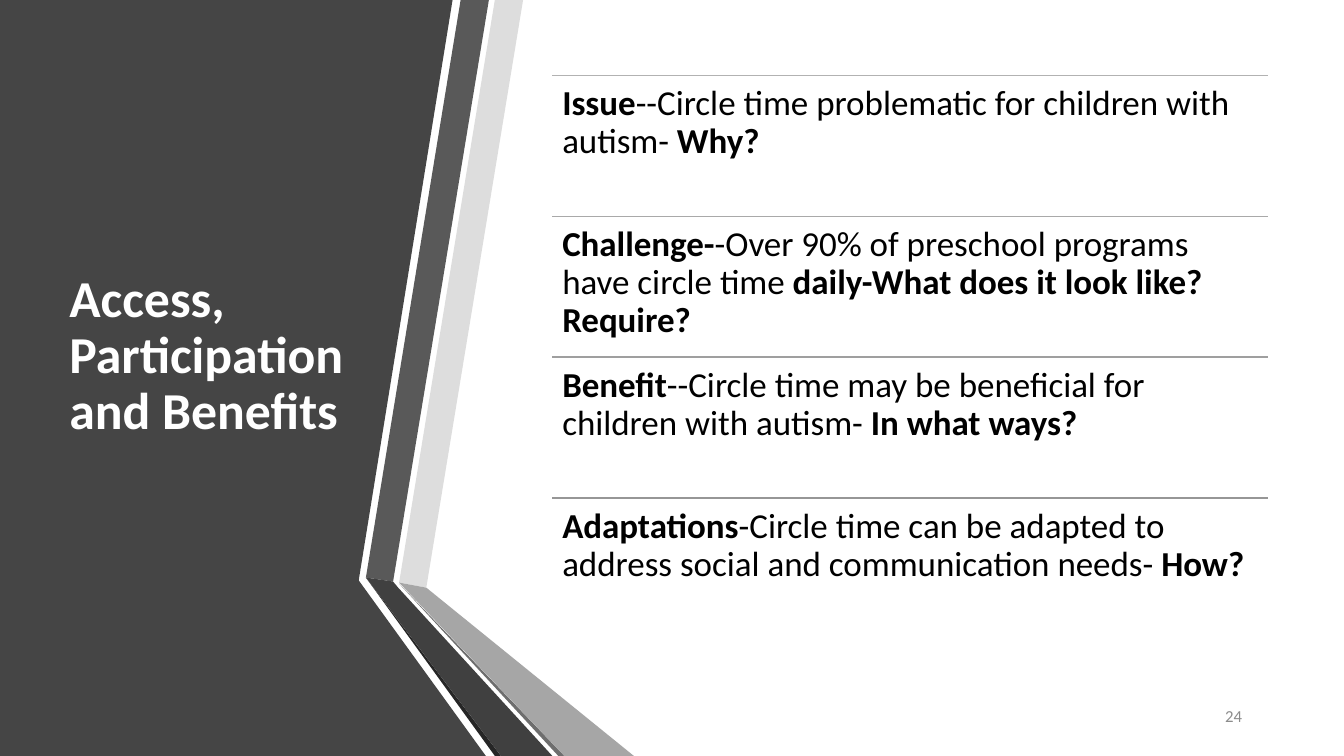
import lxml.etree
import pptx
import pptx.dml.color
import pptx.enum.shapes
import pptx.enum.text
import pptx.oxml.ns
import pptx.util

COLORS = {
    "panel": "454545", "light": "DDDDDD", "slate": "595959",
    "edge": "262626", "rim": "6E6E6E", "silver": "A6A6A6", "coal": "404040",
    "white": "FFFFFF", "black": "000000", "page": "8C8C8C",
    "rule1": "B2B2B2", "rule2": "A9A9A9", "rule3": "9F9F9F", "rule4": "969696",
}

BANDS = [
    ("panel", [(0, 0), (53.88, 0), (42.72, 69), (42.72, 69.12), (57.84, 90), (0, 90)]),
    ("light", [(47.52, 69.36), (50.76, 69.96), (62.28, 0), (58.92, 0)]),
    ("slate", [(58.2, 0), (54.84, 0), (43.56, 68.76), (46.8, 69.24)]),
    ("edge", [(43.56, 68.76), (58.92, 90), (59.64, 90)]),
    ("rim", [(47.52, 69.48), (66.48, 90), (67.2, 90)]),
    ("silver", [(47.52, 69.36), (67.2, 90), (75.48, 90), (50.76, 69.96)]),
    ("coal", [(65.76, 90), (47.4, 69.96), (46.8, 69.24), (43.56, 68.76), (59.64, 90)]),
]

POINTS = [
    ("Issue", "--Circle time problematic for children with autism- ", "Why?"),
    ("Challenge-", "-Over 90% of preschool programs have circle time ",
     "daily-What does it look like? Require?"),
    ("Benefit", "--Circle time may be beneficial for children with autism- ",
     "In what ways?"),
    ("Adaptations", "-Circle time can be adapted to address social and communication needs- ",
     "How?"),
]


class Deck:
    """Draws styled elements on one slide, over a grid of 160 columns by 90 rows."""

    font = "Calibri"
    cols, rows = 160, 90

    def __init__(self):
        self.prs = pptx.Presentation()
        self.prs.slide_width = pptx.util.Inches(40 / 3)
        self.prs.slide_height = pptx.util.Inches(7.5)
        self.slide = self.prs.slides.add_slide(self.prs.slide_layouts[6])
        self.shapes = self.slide.shapes

    def x(self, col):
        return round(self.prs.slide_width * col / self.cols)

    def y(self, row):
        return round(self.prs.slide_height * row / self.rows)

    def color(self, name):
        return pptx.dml.color.RGBColor.from_string(COLORS[name])

    def band(self, color, spots):
        spots = [(self.x(col), self.y(row)) for col, row in spots]
        pen = self.shapes.build_freeform(*spots[0])
        pen.add_line_segments(spots[1:], close=True)
        shape = pen.convert_to_shape()
        shape.shadow.inherit = False
        shape.fill.solid()
        shape.fill.fore_color.rgb = self.color(color)
        shape.line.fill.background()

    def rule(self, col, row, width, color):
        line = self.shapes.add_connector(
            pptx.enum.shapes.MSO_CONNECTOR.STRAIGHT,
            self.x(col), self.y(row), self.x(col + width), self.y(row))
        line.line.color.rgb = self.color(color)
        line.line.width = pptx.util.Pt(1)
        lxml.etree.SubElement(line._element.spPr, pptx.oxml.ns.qn("a:effectLst"))

    def text(self, place, parts, size, color, bold=(False,),
             anchor="MIDDLE", align="LEFT", pad=0.05, lead=0.9):
        col, row, width, height = place
        box = self.shapes.add_textbox(self.x(col), self.y(row), self.x(width), self.y(height))
        frame = box.text_frame
        frame.word_wrap = True
        frame.margin_top = frame.margin_bottom = pptx.util.Inches(pad)
        frame.margin_left = frame.margin_right = pptx.util.Inches(0.1)
        frame.vertical_anchor = pptx.enum.text.MSO_ANCHOR[anchor]
        para = frame.paragraphs[0]
        para.alignment = pptx.enum.text.PP_ALIGN[align]
        para.line_spacing = lead
        para.font.name = self.font
        para.font.size = pptx.util.Pt(size)
        para.font.color.rgb = self.color(color)
        for part, heavy in zip(parts, bold):
            run = para.add_run()
            run.text = part
            run.font.bold = heavy

    def save(self):
        self.prs.save("out.pptx")


def main():
    deck = Deck()
    for color, spots in BANDS:
        deck.band(color, spots)
    deck.text((7.08, 9, 36.48, 66.96), ["Access, Participation and Benefits"],
              37, "white", bold=(True,))
    deck.text((134.76, 82.8, 14.28, 4.8), ["24"], 12, "page", align="RIGHT", lead=1.0)
    left, top, width, step = 65.76, 9, 85.2, 16.76
    for i, parts in enumerate(POINTS):
        row = top + i * step
        deck.rule(left, row, width, f"rule{i + 1}")
        deck.text((left, row, width, step), parts, 25, "black",
                  bold=(True, False, True), anchor="TOP", pad=0.1)
    deck.save()


if __name__ == "__main__":
    main()
